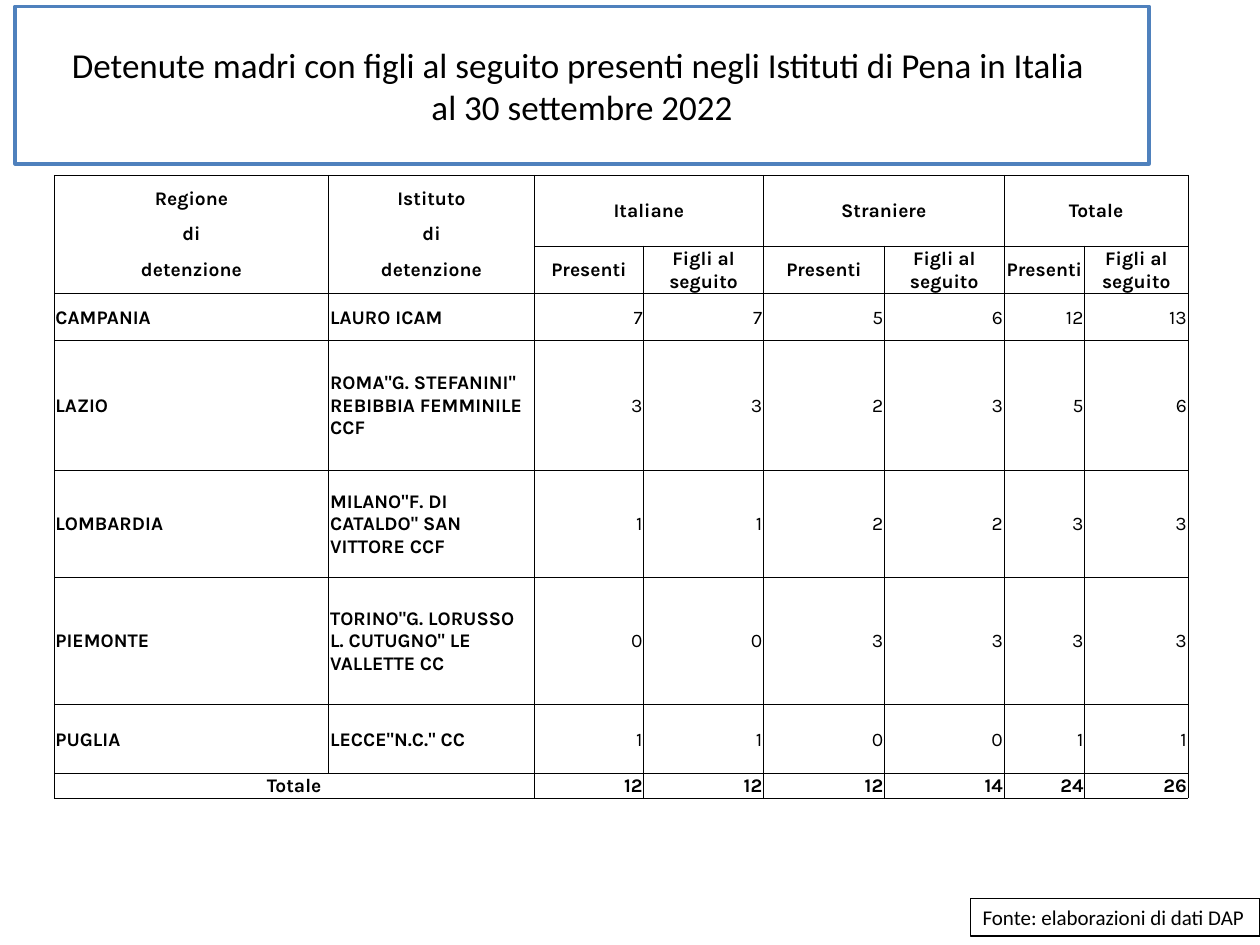
from lxml import etree
from pptx import Presentation
from pptx.dml.color import RGBColor
from pptx.enum.shapes import MSO_SHAPE
from pptx.enum.text import MSO_ANCHOR, MSO_AUTO_SIZE, PP_ALIGN
from pptx.oxml.ns import qn
from pptx.util import Inches, Pt

BLACK = RGBColor(0x00, 0x00, 0x00)
WHITE = RGBColor(0xFF, 0xFF, 0xFF)
BLUE = RGBColor(0x4F, 0x81, 0xBD)

TITLE = ("Detenute madri con figli al seguito presenti negli Istituti di Pena in Italia "
         "\val 30 settembre 2022")
SOURCE = "Fonte: elaborazioni di dati DAP"

COLUMN_WIDTHS = [2.18, 1.63, 0.87, 0.95, 0.96, 0.95, 0.64, 0.82]
ROW_HEIGHTS = [0.37, 0.19, 0.37, 0.37, 1.03, 0.85, 1.01, 0.55, 0.19]
HEADER_ROWS = 3
LABEL_COLUMNS = 2
TOTAL_ROW = len(ROW_HEIGHTS) - 1
ROWS = [
    ["Regione", "Istituto", "Italiane", "", "Straniere", "", "Totale", ""],
    ["di", "di"] + [""] * 6,
    ["detenzione", "detenzione"] + ["Presenti", "Figli al seguito"] * 3,
    ["CAMPANIA", "LAURO ICAM", 7, 7, 5, 6, 12, 13],
    ["LAZIO", 'ROMA"G. STEFANINI" REBIBBIA FEMMINILE CCF', 3, 3, 2, 3, 5, 6],
    ["LOMBARDIA", 'MILANO"F. DI CATALDO" SAN VITTORE CCF', 1, 1, 2, 2, 3, 3],
    ["PIEMONTE", 'TORINO"G. LORUSSO L. CUTUGNO" LE VALLETTE CC', 0, 0, 3, 3, 3, 3],
    ["PUGLIA", 'LECCE"N.C." CC', 1, 1, 0, 0, 1, 1],
    ["Totale", "", 12, 12, 12, 14, 24, 26],
]


def format_font(font, **values):
    for name, value in values.items():
        setattr(font, name, value)
    font.color.rgb = BLACK


def add_framed_text(slide, text, position, line, alignment, size, **frame_values):
    """Add a white rectangle with a (colour, width) outline and Calibri text."""
    shape = slide.shapes.add_shape(MSO_SHAPE.RECTANGLE, *map(Inches, position))
    shape.shadow.inherit = False
    shape.fill.solid()
    shape.fill.fore_color.rgb = WHITE
    shape.line.color.rgb, shape.line.width = line
    shape.text_frame.text = text
    for name, value in frame_values.items():
        setattr(shape.text_frame, name, value)
    paragraph = shape.text_frame.paragraphs[0]
    paragraph.alignment = alignment
    for run in paragraph.runs:
        format_font(run.font, name="Calibri", size=size)


def set_borders(cell, hidden):
    """Draw thin black borders, leaving out the sides named in hidden."""
    properties = cell._tc.get_or_add_tcPr()
    for side in "LRTB":
        border = etree.SubElement(properties, qn(f"a:ln{side}"), w=str(Pt(0.5)))
        if side in hidden:
            etree.SubElement(border, qn("a:noFill"))
        else:
            fill = etree.SubElement(border, qn("a:solidFill"))
            etree.SubElement(fill, qn("a:srgbClr"), val=str(BLACK))


def hidden_sides(row, column):
    """The stacked header words share one frame without inner lines."""
    if column >= LABEL_COLUMNS or row >= HEADER_ROWS:
        return ""
    return ("T" if row > 0 else "") + ("B" if row < HEADER_ROWS - 1 else "")


def fill_cell(cell, value, row, column):
    is_number = isinstance(value, int)
    cell_format = {
        "margin_left": Inches(0.01), "margin_right": Inches(0.01),
        "margin_top": Inches(0.01), "margin_bottom": 0,
        "vertical_anchor": MSO_ANCHOR.MIDDLE,
    }
    for name, setting in cell_format.items():
        setattr(cell, name, setting)
    set_borders(cell, hidden_sides(row, column))
    cell.fill.background()

    paragraph = cell.text_frame.paragraphs[0]
    if is_number:
        paragraph.alignment = PP_ALIGN.RIGHT
    elif row < HEADER_ROWS or row == TOTAL_ROW:
        paragraph.alignment = PP_ALIGN.CENTER
    else:
        paragraph.alignment = PP_ALIGN.LEFT
    font_format = {"name": "Karla", "size": Pt(11),
                   "bold": not is_number or row == TOTAL_ROW}
    format_font(paragraph.font, **font_format)
    if value != "":
        run = paragraph.add_run()
        run.text = str(value)
        format_font(run.font, **font_format)


def add_detention_table(slide):
    frame = slide.shapes.add_table(
        len(ROW_HEIGHTS), len(COLUMN_WIDTHS), Inches(0.43), Inches(1.39),
        Inches(sum(COLUMN_WIDTHS)), Inches(sum(ROW_HEIGHTS)))
    table = frame.table
    table.first_row = table.horz_banding = False
    for column, width in zip(table.columns, COLUMN_WIDTHS):
        column.width = Inches(width)
    for row, height in zip(table.rows, ROW_HEIGHTS):
        row.height = Inches(height)
    for row, values in enumerate(ROWS):
        for column, value in enumerate(values):
            fill_cell(table.cell(row, column), value, row, column)
    for column in range(LABEL_COLUMNS, len(COLUMN_WIDTHS), 2):
        table.cell(0, column).merge(table.cell(1, column + 1))
    table.cell(TOTAL_ROW, 0).merge(table.cell(TOTAL_ROW, 1))


def main():
    presentation = Presentation()
    presentation.slide_width, presentation.slide_height = Inches(10), Inches(7.5)
    slide = presentation.slides.add_slide(presentation.slide_layouts[6])
    add_framed_text(slide, TITLE, (0.12, 0.05, 9, 1.25), (BLUE, Pt(2)),
                    PP_ALIGN.CENTER, Pt(20),
                    word_wrap=True, vertical_anchor=MSO_ANCHOR.MIDDLE)
    add_framed_text(slide, SOURCE, (7.7, 7.13, 2.3, 0.3), (BLACK, Pt(0.75)),
                    PP_ALIGN.LEFT, Pt(12), word_wrap=False,
                    vertical_anchor=MSO_ANCHOR.TOP,
                    auto_size=MSO_AUTO_SIZE.SHAPE_TO_FIT_TEXT)
    add_detention_table(slide)
    presentation.save("out.pptx")


if __name__ == "__main__":
    main()
